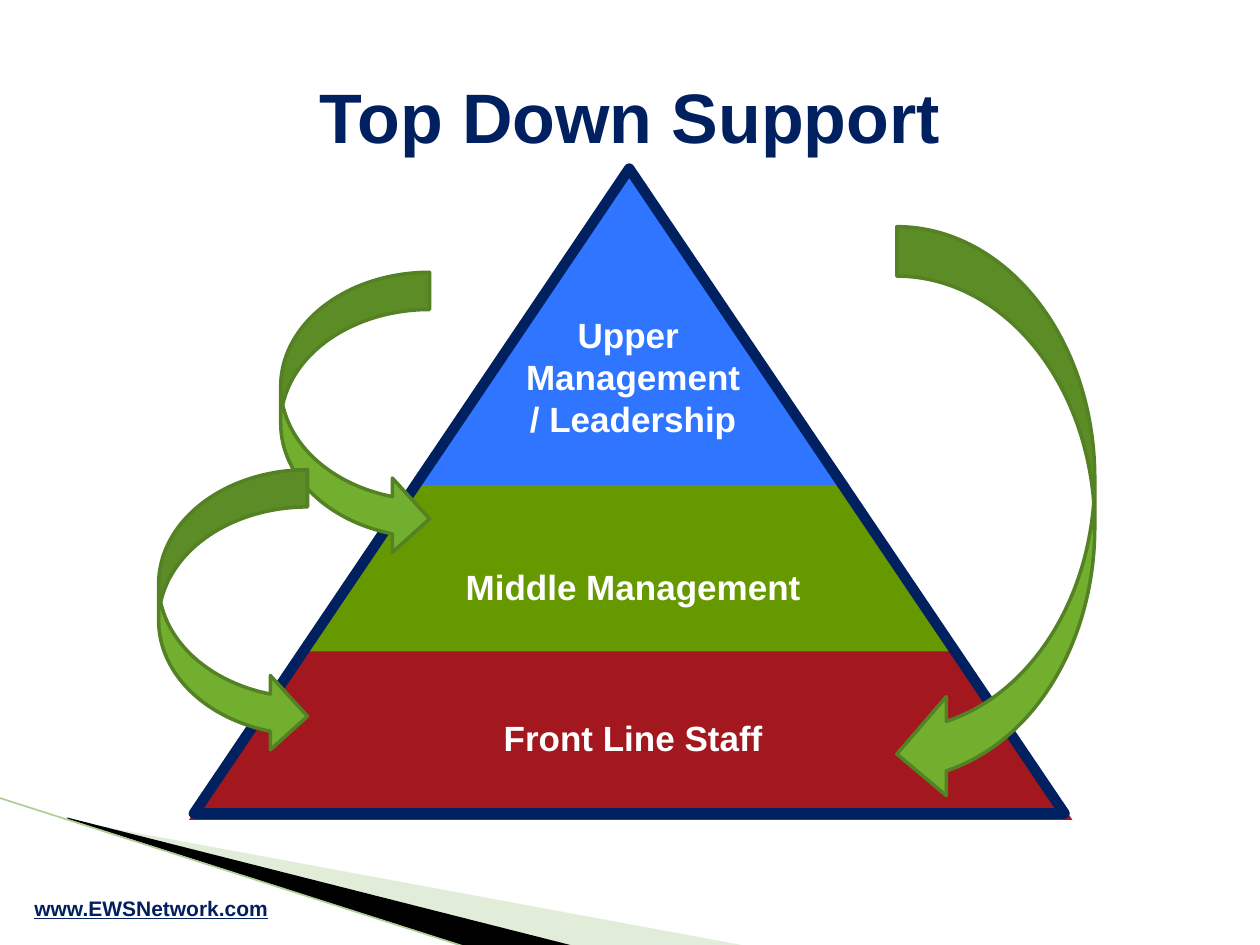
from dataclasses import dataclass

from lxml.etree import SubElement
from pptx import Presentation
from pptx.dml.color import RGBColor
from pptx.enum.shapes import MSO_CONNECTOR, MSO_SHAPE
from pptx.enum.text import MSO_ANCHOR, PP_ALIGN
from pptx.oxml.ns import qn
from pptx.util import Cm, Pt


@dataclass(frozen=True)
class Theme:
    font: str = "Arial"
    navy: str = "002060"
    white: str = "FFFFFF"
    black: str = "000000"
    red: str = "A3171E"
    olive: str = "669900"
    blue: str = "3075FF"
    arrow: str = "72AF2F"
    arrow_edge: str = "548123"
    pale: str = "B4D3A1"
    rule: str = "ACCE98"
    title_size: int = 40
    label_size: int = 20
    link_size: int = 12


theme = Theme()
deck = Presentation()
deck.slide_width, deck.slide_height = Cm(25.4), Cm(19.05)
page = deck.slides.add_slide(deck.slide_layouts[6])


def add_text(lines, place, size, color, anchor=MSO_ANCHOR.TOP, underline=None, leading=None):
    """Add a centred bold text box; lines holds (text, space before) pairs."""
    box = page.shapes.add_textbox(*map(Cm, place))
    frame = box.text_frame
    frame.word_wrap = True
    frame.vertical_anchor = anchor
    for index, (text, gap) in enumerate(lines):
        para = frame.paragraphs[0] if index == 0 else frame.add_paragraph()
        para.alignment = PP_ALIGN.CENTER
        if gap:
            para.space_before = Pt(gap)
        if leading:
            para.line_spacing = Pt(leading)
        span = para.add_run()
        span.text = text
        span.font.name = theme.font
        span.font.size = Pt(size)
        span.font.bold = True
        span.font.underline = underline
        span.font.color.rgb = RGBColor.from_string(color)


def paint(shape, fill=None, line=None, width=0):
    """Set fill and outline, with rounded corners on the outline."""
    shape.shadow.inherit = False
    if fill:
        shape.fill.solid()
        shape.fill.fore_color.rgb = RGBColor.from_string(fill)
    else:
        shape.fill.background()
    if line:
        shape.line.color.rgb = RGBColor.from_string(line)
        shape.line.width = Pt(width)
        SubElement(shape.line._get_or_add_ln(), qn("a:round"))
    else:
        shape.line.fill.background()


# Corner wedges: points in cm, colour, opacity in percent
wedges = [
    ([(1.4, 16.54), (15.11, 19.08), (11.58, 19.08), (1.4, 16.51)], theme.pale, 40),
    ([(1.35, 16.48), (11.61, 19.08), (9.45, 19.1), (1.37, 16.51)], theme.black, 100),
]
for points, color, opacity in wedges:
    start, *rest = [(Cm(x), Cm(y)) for x, y in points]
    builder = page.shapes.build_freeform(*start)
    builder.add_line_segments(rest, close=True)
    wedge = builder.convert_to_shape()
    paint(wedge, color)
    if opacity < 100:
        tint = wedge.fill._xPr.find(qn("a:solidFill"))[0]
        SubElement(tint, qn("a:alpha"), val=str(opacity * 1000))

# Thin rule along the wedges
rule = page.shapes.add_connector(
    MSO_CONNECTOR.STRAIGHT, Cm(-0.03), Cm(16.08), Cm(9.42), Cm(19.1))
rule.line.color.rgb = RGBColor.from_string(theme.rule)
rule.line.width = Pt(0.95)
SubElement(rule._element.spPr, qn("a:effectLst"))

# Title and web address
add_text([("Top Down Support", 0)], (0, 0.74, 25.4, 3.18), theme.title_size, theme.navy,
         anchor=MSO_ANCHOR.MIDDLE)
add_text([("www.EWSNetwork.com", 0)], (0, 17.93, 6.1, 0.76), theme.link_size, theme.navy,
         underline=True)

# Pyramid: nested triangles with a common apex, then the outline
triangles = [
    ((3.81, 3.53, 17.81, 13), {"fill": theme.red}),
    ((6.2, 3.53, 13, 9.6), {"fill": theme.olive}),
    ((8.31, 3.53, 8.81, 6.25), {"fill": theme.blue}),
    ((3.91, 3.4, 17.55, 13), {"line": theme.navy, "width": 6}),
]
for place, style in triangles:
    paint(page.shapes.add_shape(MSO_SHAPE.ISOSCELES_TRIANGLE, *map(Cm, place)), **style)

# Level names
levels = [("Upper ", 0), ("Management", 0), ("/ Leadership", 0),
          ("Middle Management", 72), ("Front Line Staff", 62)]
add_text(levels, (7.57, 6.2, 10.39, 10.52), theme.label_size, theme.white, leading=24)

# Support arrows
arrows = [
    (MSO_SHAPE.CURVED_RIGHT_ARROW, (5.66, 5.49, 3, 5.72)),
    (MSO_SHAPE.CURVED_RIGHT_ARROW, (3.2, 9.47, 3, 5.72)),
    (MSO_SHAPE.CURVED_LEFT_ARROW, (18.08, 4.57, 3.99, 11.63)),
]
for kind, place in arrows:
    paint(page.shapes.add_shape(kind, *map(Cm, place)), theme.arrow, theme.arrow_edge, 2)

deck.save("out.pptx")
